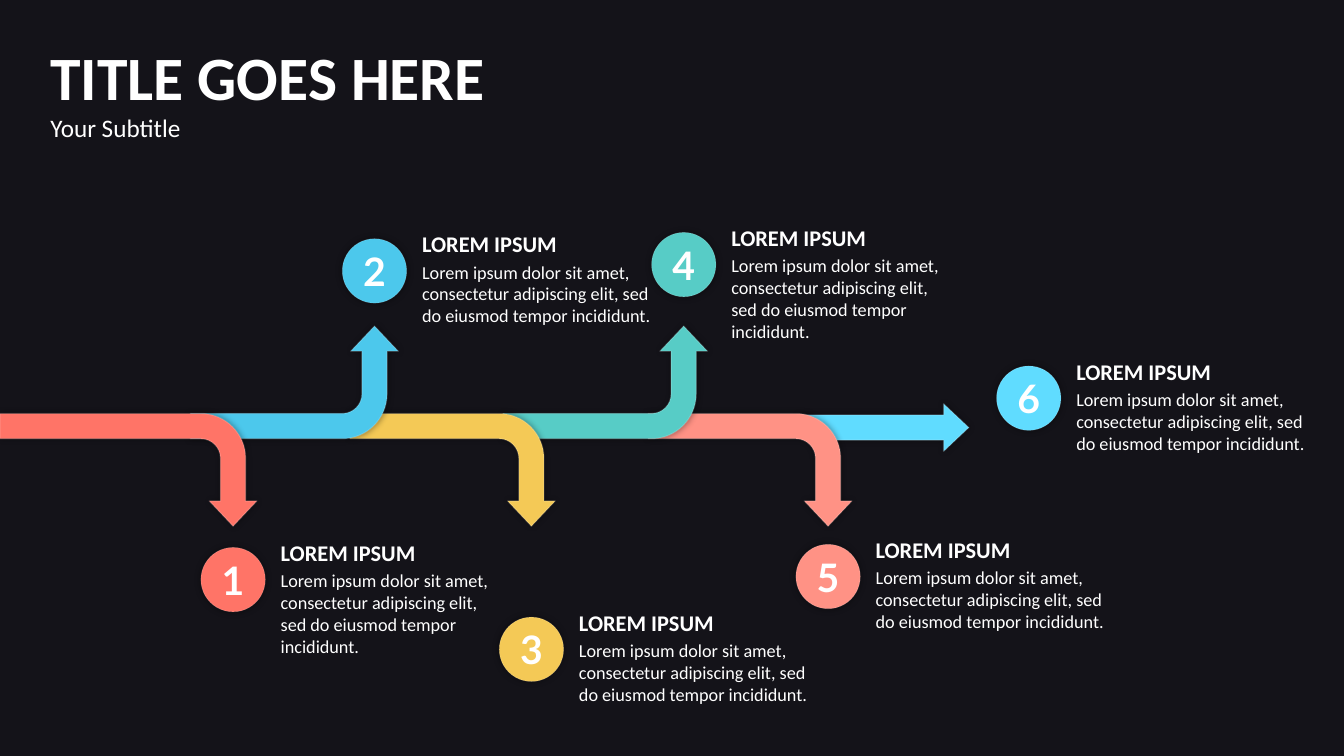
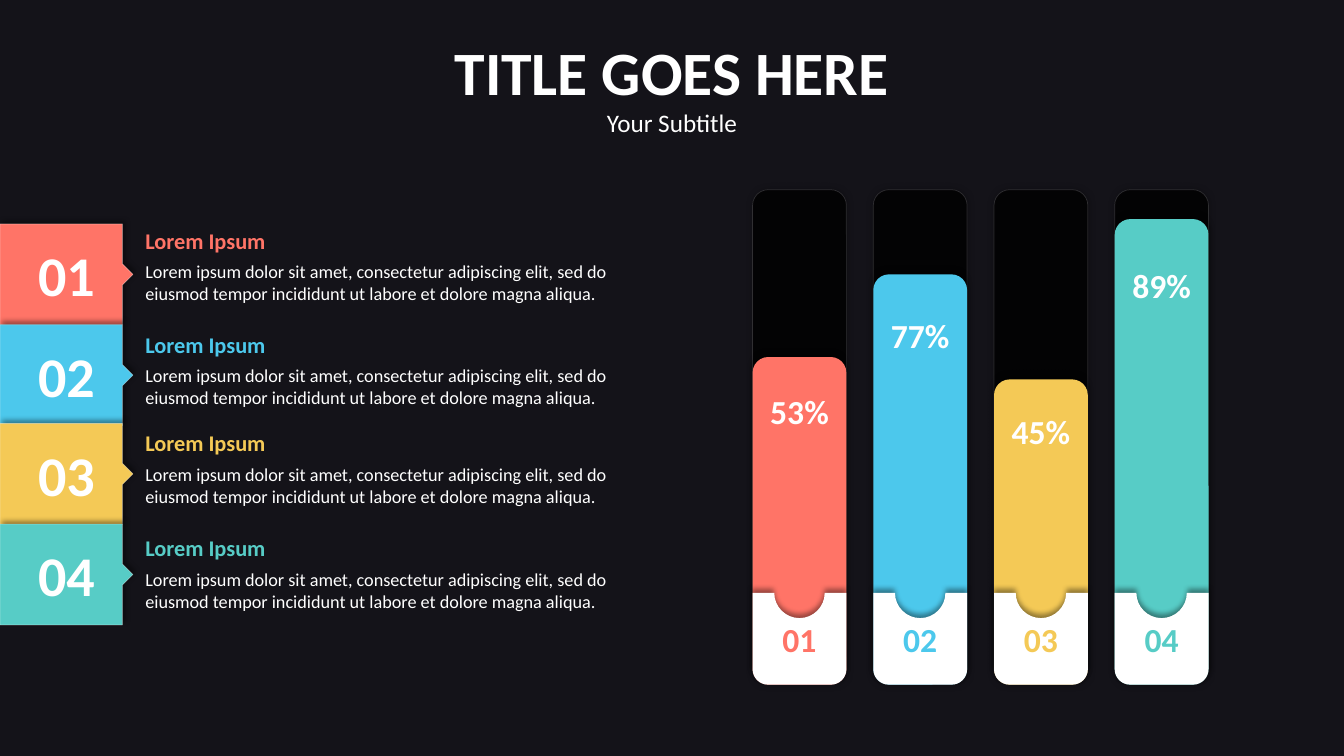
"""Build two dark infographic slides: a branching arrow timeline and a percentage column panel."""
import lxml.etree
import pptx
import pptx.dml.color
import pptx.enum.shapes
import pptx.enum.text
import pptx.oxml.ns
import pptx.util

Pt = pptx.util.Pt
RGBColor = pptx.dml.color.RGBColor
SHAPE = pptx.enum.shapes.MSO_SHAPE
LEFT = pptx.enum.text.PP_ALIGN.LEFT
CENTER = pptx.enum.text.PP_ALIGN.CENTER
TOP = pptx.enum.text.MSO_ANCHOR.TOP
MIDDLE = pptx.enum.text.MSO_ANCHOR.MIDDLE
qn = pptx.oxml.ns.qn

BACKGROUND = RGBColor(0x52, 0x4E, 0x67)
BLACK = RGBColor(0x00, 0x00, 0x00)
WHITE = RGBColor(0xFF, 0xFF, 0xFF)
RED = RGBColor(0xFF, 0x74, 0x67)
BLUE = RGBColor(0x4C, 0xC8, 0xEC)
YELLOW = RGBColor(0xF4, 0xC9, 0x56)
TEAL = RGBColor(0x57, 0xCC, 0xC6)
PINK = RGBColor(0xFF, 0x92, 0x85)
CYAN = RGBColor(0x60, 0xDC, 0xFF)

GLOW = (5, 0, 0)
SHADOW_UP = (4, 3, 270)
SHADOW_UP_RIGHT = (4, 3, 315)
ROUND = 0.55
LOREM = "Lorem ipsum dolor sit amet, consectetur adipiscing elit, sed do eiusmod tempor incididunt"


def paint(shape, colour, shadow=None, line_width=0, line_opacity=15, opacity=100):
    """Give a shape its fill, translucent white outline and soft shadow."""
    shape.fill.solid()
    shape.fill.fore_color.rgb = colour
    properties = shape._element.spPr
    if opacity < 100:
        fill_colour = properties.find(qn("a:solidFill")).find(qn("a:srgbClr"))
        lxml.etree.SubElement(fill_colour, qn("a:alpha"), val=str(opacity * 1000))
    if line_width:
        shape.line.width = Pt(line_width)
        shape.line.color.rgb = WHITE
        line_colour = properties.find(qn("a:ln")).find(".//" + qn("a:srgbClr"))
        lxml.etree.SubElement(line_colour, qn("a:alpha"), val=str(line_opacity * 1000))
    else:
        shape.line.fill.background()
    shape.shadow.inherit = False
    if shadow:
        blur, distance, direction = shadow
        outer = lxml.etree.SubElement(
            properties.find(qn("a:effectLst")), qn("a:outerShdw"), blurRad=str(Pt(blur)),
            dist=str(Pt(distance)), dir=str(direction * 60000), algn="ctr", rotWithShape="0")
        shadow_colour = lxml.etree.SubElement(outer, qn("a:srgbClr"), val="000000")
        lxml.etree.SubElement(shadow_colour, qn("a:alpha"), val="40000")


def write(shape, lines, alignment=CENTER, anchor=MIDDLE, gap=0, font="Calibri"):
    """Fill a shape with lines given as text, size, bold and colour."""
    frame = shape.text_frame
    frame.text = "\n".join(line[0] for line in lines)
    frame.word_wrap = True
    frame.auto_size = pptx.enum.text.MSO_AUTO_SIZE.NONE
    frame.vertical_anchor = anchor
    frame.margin_left = frame.margin_right = frame.margin_top = frame.margin_bottom = 0
    for index, (paragraph, line) in enumerate(zip(frame.paragraphs, lines)):
        paragraph.alignment = alignment
        paragraph.line_spacing = 1.0
        paragraph.space_before = Pt(gap if index else 0)
        for run in paragraph.runs:
            run.font.name = font
            run.font.size = Pt(line[1])
            run.font.bold = line[2]
            run.font.color.rgb = line[3]


presentation = pptx.Presentation()
presentation.slide_width = Pt(960)
presentation.slide_height = Pt(540)
master = presentation.slide_master
master.background.fill.solid()
master.background.fill.fore_color.rgb = BACKGROUND

slides = []
for left, top, width, alignment in [(36, 27.5, 454, LEFT), (270, 24, 420, CENTER)]:
    slide = presentation.slides.add_slide(presentation.slide_layouts[5])
    title = slide.shapes.title
    title.left, title.top, title.width, title.height = Pt(left), Pt(top), Pt(width), Pt(76)
    write(title, [("TITLE GOES HERE", 44, True, WHITE), ("Your Subtitle", 18, False, WHITE)], alignment, TOP)
    slides.append(slide)
timeline, columns = slides

overlay = timeline.shapes.add_shape(SHAPE.RECTANGLE, 0, 0, presentation.slide_width, presentation.slide_height)
paint(overlay, BLACK, opacity=75)
overlay._element.nvSpPr.cNvPr.set("id", "20")
master.shapes._spTree.insert(2, overlay._element)

ROAD_MIDDLE = 304.4
HALF_ROAD = 9
OUTER_RADIUS = 32
INNER_RADIUS = OUTER_RADIUS - 2 * HALF_ROAD
BEND = OUTER_RADIUS - HALF_ROAD
HALF_HEAD = 17
HEAD_START = 53.5
HEAD_TIP = 71.5
CIRCLE = 46

steps = [
    (RED, 0, 166.5, 391, 156),
    (BLUE, 136, 267.5, 170.5, 168),
    (YELLOW, 250, 379.6, 440.8, 166),
    (TEAL, 359.3, 488.4, 166, 155),
    (PINK, 463, 591.5, 388.8, 166),
    (CYAN, 571, 734.8, 261.4, 166),
]
freeforms = []

tail = steps[5][1]
head, tip, middle = 674, 692, ROAD_MIDDLE + 1
outline = [
    (tail, middle - HALF_ROAD), (head, middle - HALF_ROAD), (head, middle - HALF_HEAD), (tip, middle),
    (head, middle + HALF_HEAD), (head, middle + HALF_ROAD), (tail + 17, middle + HALF_ROAD),
    (tail + 13, middle + 4), (tail + 7, middle + 1), (tail, middle + 1),
]
points = [(Pt(x), Pt(y)) for x, y in outline]
builder = timeline.shapes.build_freeform(*points[0])
builder.add_line_segments(points[1:])
straight_arrow = builder.convert_to_shape()
paint(straight_arrow, CYAN, GLOW, 1)
freeforms.append((straight_arrow, [6]))

for index in reversed(range(5)):
    colour, tail, shaft = steps[index][:3]
    direction = -1 if index % 2 else 1
    corner = shaft - BEND
    outer_edge, inner_edge = shaft + HALF_ROAD, shaft - HALF_ROAD
    outline = [
        (tail, -HALF_ROAD), (corner, -HALF_ROAD),
        (corner + ROUND * OUTER_RADIUS, -HALF_ROAD), (outer_edge, BEND - ROUND * OUTER_RADIUS), (outer_edge, BEND),
        (outer_edge, HEAD_START), (shaft + HALF_HEAD, HEAD_START), (shaft, HEAD_TIP),
        (shaft - HALF_HEAD, HEAD_START), (inner_edge, HEAD_START), (inner_edge, BEND),
        (inner_edge, BEND - ROUND * INNER_RADIUS), (corner + ROUND * INNER_RADIUS, HALF_ROAD), (corner, HALF_ROAD),
        (tail, HALF_ROAD),
    ]
    points = [(Pt(x), Pt(ROAD_MIDDLE + direction * y)) for x, y in outline]
    builder = timeline.shapes.build_freeform(*points[0])
    builder.add_line_segments(points[1:])
    elbow_arrow = builder.convert_to_shape()
    paint(elbow_arrow, colour, GLOW, 1)
    freeforms.append((elbow_arrow, [1, 10]))

for number, (colour, tail, center, top, text_width) in enumerate(steps, 1):
    left = center - CIRCLE / 2
    circle = timeline.shapes.add_shape(SHAPE.OVAL, Pt(left), Pt(top), Pt(CIRCLE), Pt(CIRCLE))
    paint(circle, colour, GLOW, 0.5)
    write(circle, [(str(number), 28, True, WHITE)], font="Lato")
    caption = timeline.shapes.add_textbox(Pt(left + 57), Pt(top - 5.8), Pt(text_width), Pt(85))
    write(caption, [("LOREM IPSUM", 16, True, WHITE), (LOREM + ".", 13, False, WHITE)], LEFT, TOP, 2.4)

COLUMN_WIDTH = 67
COLUMN_TOP = 135.5
COLUMN_BOTTOM = 489
CUP_TOP = 423.5
NOTCH = 18
CORNER = 11
TAB_SIDE = 87.5
TAB_TIP = 95
TAB_HEIGHT = 72

items = [
    (RED, "53%", 255, 277.2, 160, 162),
    (BLUE, "77%", 196, 222.8, 232, 236.2),
    (YELLOW, "45%", 271, 291.2, 302.5, 306.7),
    (TEAL, "89%", 156.5, 187.2, 374.4, 381.6),
]

for index, (colour, percent, bar_top, percent_top, tab_top, text_top) in enumerate(items):
    number = f"{index + 1:02d}"
    left = 537.6 + 86.22 * index
    right = left + COLUMN_WIDTH
    center = left + COLUMN_WIDTH / 2

    track, bar = [
        columns.shapes.add_shape(
            SHAPE.ROUNDED_RECTANGLE, Pt(left), Pt(top), Pt(COLUMN_WIDTH), Pt(COLUMN_BOTTOM - top))
        for top in (COLUMN_TOP, bar_top)]
    paint(track, BLACK, GLOW, 0.5, opacity=75)
    paint(bar, colour, SHADOW_UP)
    percent_box = columns.shapes.add_textbox(Pt(left), Pt(percent_top), Pt(COLUMN_WIDTH), Pt(33))
    write(percent_box, [(percent, 24, True, WHITE)])

    low, bottom = COLUMN_BOTTOM - CORNER, COLUMN_BOTTOM
    notch_bottom = CUP_TOP + NOTCH
    notch_curve = CUP_TOP + ROUND * NOTCH
    corner_curve = low + ROUND * CORNER
    inset = CORNER * (1 - ROUND)
    cup_outline = [
        (left, CUP_TOP), (center - NOTCH, CUP_TOP),
        (center - NOTCH, notch_curve), (center - ROUND * NOTCH, notch_bottom), (center, notch_bottom),
        (center + ROUND * NOTCH, notch_bottom), (center + NOTCH, notch_curve), (center + NOTCH, CUP_TOP),
        (right, CUP_TOP), (right, low),
        (right, corner_curve), (right - inset, bottom), (right - CORNER, bottom),
        (left + CORNER, bottom),
        (left + inset, bottom), (left, corner_curve), (left, low),
    ]
    tab_middle = tab_top + TAB_HEIGHT / 2
    point = TAB_TIP - TAB_SIDE
    tab_outline = [
        (0, tab_top), (TAB_SIDE, tab_top), (TAB_SIDE, tab_middle - point), (TAB_TIP, tab_middle),
        (TAB_SIDE, tab_middle + point), (TAB_SIDE, tab_top + TAB_HEIGHT), (0, tab_top + TAB_HEIGHT),
    ]
    for outline, curves, style, size, text_colour in [
        (cup_outline, [1, 4, 9, 13], (WHITE, SHADOW_UP), 24, colour),
        (tab_outline, [], (colour, SHADOW_UP_RIGHT, 0.5, 35), 40, WHITE),
    ]:
        points = [(Pt(x), Pt(y)) for x, y in outline]
        builder = columns.shapes.build_freeform(*points[0])
        builder.add_line_segments(points[1:])
        label = builder.convert_to_shape()
        paint(label, *style)
        write(label, [(number, size, True, text_colour)])
        freeforms.append((label, curves))

    caption = columns.shapes.add_textbox(Pt(103.8), Pt(text_top), Pt(361), Pt(55.5))
    body = LOREM + " ut labore et dolore magna aliqua."
    write(caption, [("Lorem Ipsum", 16, True, colour), (body, 13, False, WHITE)], LEFT, TOP, 4.9)

for shape, curves in freeforms:
    segments = shape._element.findall(".//" + qn("a:lnTo"))
    for start in curves:
        curve = segments[start]
        curve.tag = qn("a:cubicBezTo")
        for segment in segments[start + 1:start + 3]:
            curve.append(segment[0])
            segment.getparent().remove(segment)

presentation.save("out.pptx")
